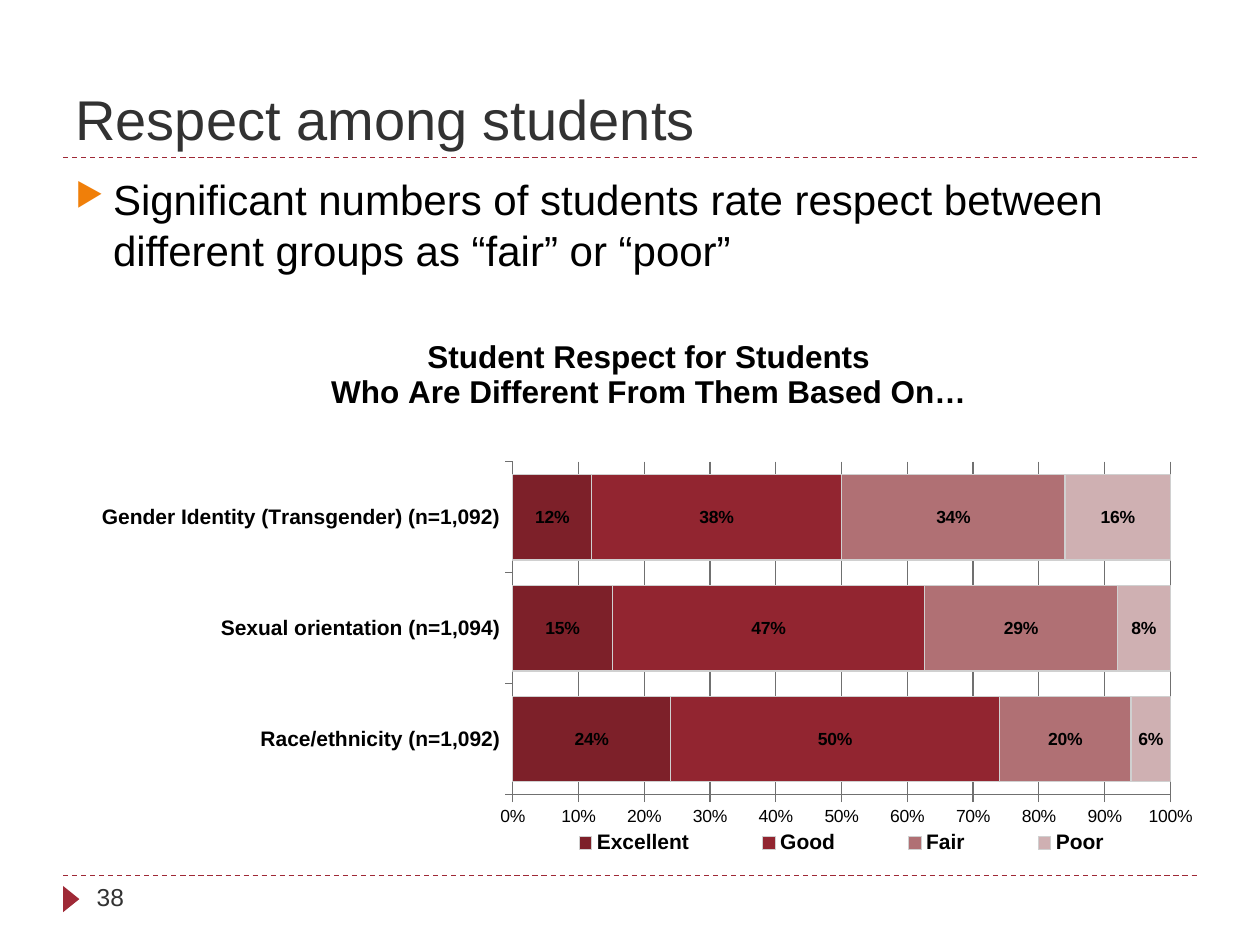
from lxml.etree import SubElement
from pptx import Presentation
from pptx.chart.data import CategoryChartData
from pptx.dml.color import RGBColor
from pptx.enum.chart import XL_CHART_TYPE as ChartType, XL_LABEL_POSITION as LabelPos
from pptx.enum.chart import XL_LEGEND_POSITION as LegendPos, XL_TICK_MARK as TickMark
from pptx.enum.dml import MSO_LINE as Dash
from pptx.enum.shapes import MSO_CONNECTOR as Connector, MSO_SHAPE as Shape
from pptx.enum.text import MSO_ANCHOR as Anchor
from pptx.oxml import parse_xml
from pptx.oxml.ns import nsdecls, qn
from pptx.util import Cm, Pt

RED, ORANGE, DARK, BLACK, GREY = "9F2936", "F07F09", "323232", "000000", "707070"
GROUPS = ["Race/ethnicity (n=1,092)", "Sexual orientation (n=1,094)",
          "Gender Identity (Transgender) (n=1,092)"]
RATINGS = [
    ("Excellent", "7D2029", (0.24, 0.15, 0.12)),
    ("Good", "922530", (0.5, 0.47, 0.38)),
    ("Fair", "B07074", (0.2, 0.29, 0.34)),
    ("Poor", "CFB0B2", (0.06, 0.08, 0.16)),
]


def color(hex_code):
    """Return the colour for a hex string."""
    return RGBColor.from_string(hex_code)


def style(font, size, hex_code=BLACK, bold=False):
    """Set typeface, size, colour and weight of a font."""
    font.name, font.size, font.bold = "Arial", Pt(size), bold
    font.color.rgb = color(hex_code)


def add_text(slide, box, text, size, hex_code, anchor=Anchor.TOP):
    """Add a wrapped one-paragraph text box and return its paragraph."""
    frame = slide.shapes.add_textbox(*map(Cm, box)).text_frame
    frame.word_wrap, frame.vertical_anchor = True, anchor
    paragraph = frame.paragraphs[0]
    paragraph.text = text
    style(paragraph.font, size, hex_code)
    return paragraph


def add_rule(slide, left, top, width):
    """Add a dashed horizontal rule."""
    rule = slide.shapes.add_connector(
        Connector.STRAIGHT, Cm(left), Cm(top), Cm(left + width), Cm(top))
    rule.line.color.rgb = color(RED)
    rule.line.width, rule.line.dash_style = Pt(0.75), Dash.DASH
    SubElement(rule._element.spPr, qn("a:effectLst"))


def add_heading(slide, left, top, width, height):
    """Add the title with the rule along its bottom edge."""
    add_rule(slide, left, top + height, width)
    add_text(slide, (left, top, width, height), "Respect among students",
             32, DARK, Anchor.BOTTOM)


def add_statement(slide, left, top, width, height):
    """Add the bulleted statement."""
    statement = add_text(
        slide, (left, top, width, height),
        "Significant numbers of students rate respect between "
        "different groups as “fair” or “poor”", 24, BLACK)
    statement.space_before = Pt(6)
    props = statement._p.get_or_add_pPr()
    props.set("marL", str(Cm(0.76)))
    props.set("indent", str(-Cm(0.76)))
    bullet_color = SubElement(props, qn("a:buClr"))
    SubElement(bullet_color, qn("a:srgbClr"), val=ORANGE)
    SubElement(props, qn("a:buSzPct"), val="76000")
    SubElement(props, qn("a:buChar"), char="▶")


def add_footer(slide, left, top, width):
    """Add the lower rule, the marker and the slide number."""
    add_rule(slide, left, top, width)
    marker = slide.shapes.add_shape(
        Shape.ISOSCELES_TRIANGLE, Cm(left - 0.1), Cm(top + 0.31), Cm(0.53), Cm(0.33))
    marker.rotation = 90
    marker.shadow.inherit = False
    marker.fill.solid()
    marker.fill.fore_color.rgb = color(RED)
    marker.line.fill.background()
    add_text(slide, (left + 0.43, top, 5.5, 1.02), "38", 14, DARK)


def set_layout(parent, index, x, y, w, h, inner=False):
    """Place a chart part by fractions of the chart area."""
    for old in parent.findall(qn("c:layout")):
        parent.remove(old)
    target = '<c:layoutTarget val="inner"/>' if inner else ""
    parent.insert(index, parse_xml(
        f'<c:layout {nsdecls("c")}><c:manualLayout>{target}'
        '<c:xMode val="edge"/><c:yMode val="edge"/>'
        f'<c:x val="{x}"/><c:y val="{y}"/><c:w val="{w}"/><c:h val="{h}"/>'
        '</c:manualLayout></c:layout>'))


def style_axes(chart):
    """Format both axes and the gridlines."""
    groups, shares = chart.category_axis, chart.value_axis
    style(groups.tick_labels.font, 12, bold=True)
    style(shares.tick_labels.font, 10)
    shares.tick_labels.number_format = "0%"
    shares.tick_labels.number_format_is_linked = False
    shares.maximum_scale, shares.major_unit = 1, 0.1
    shares.has_major_gridlines = True
    for axis in (groups, shares):
        axis.major_tick_mark = TickMark.OUTSIDE
    for part in (groups, shares, shares.major_gridlines):
        part.format.line.color.rgb = color(GREY)
        part.format.line.width = Pt(0.75)


def style_series(series, hex_code):
    """Format one rating's bars and value labels."""
    series.format.fill.solid()
    series.format.fill.fore_color.rgb = color(hex_code)
    series.format.line.color.rgb = color("D0D0D0")
    series.format.line.width = Pt(0.75)
    labels = series.data_labels
    labels.show_value = True
    labels.number_format, labels.number_format_is_linked = "0%", False
    labels.position = LabelPos.CENTER
    style(labels.font, 10, bold=True)


def add_respect_chart(slide, left, top, width, height):
    """Add the stacked chart of ratings by group."""
    data = CategoryChartData(number_format="0%")
    data.categories = GROUPS
    for rating, _, shares in RATINGS:
        data.add_series(rating, shares)
    chart = slide.shapes.add_chart(
        ChartType.BAR_STACKED_100, *map(Cm, (left, top, width, height)), data).chart
    style(chart.font, 10)

    chart.has_title = True
    heading = chart.chart_title.text_frame
    heading.text = "Student Respect for Students\nWho Are Different From Them Based On…"
    for paragraph in heading.paragraphs:
        style(paragraph.font, 18, bold=True)
    chart.chart_title.include_in_layout = False

    plot = chart.plots[0]
    plot.gap_width, plot.overlap, plot.vary_by_categories = 30, 100, False
    for series, (_, hex_code, _) in zip(plot.series, RATINGS):
        style_series(series, hex_code)
    style_axes(chart)

    chart.has_legend = True
    chart.legend.position = LegendPos.BOTTOM
    chart.legend.include_in_layout = False
    style(chart.legend.font, 12, bold=True)
    set_layout(chart._chartSpace.chart.plotArea, 0, 0.38, 0.26, 0.58, 0.59, inner=True)
    set_layout(chart.legend._element, 1, 0.38, 0.91, 0.58, 0.05)


def main():
    """Build and save the slide."""
    deck = Presentation()
    deck.slide_width, deck.slide_height = Cm(25.4), Cm(19.05)
    slide = deck.slides.add_slide(deck.slide_layouts[6])
    left, width = 1.27, 22.86
    add_heading(slide, left, 0.43, width, 2.75)
    add_statement(slide, left, 3.38, width, 13.72)
    add_footer(slide, left, 17.65, width)
    add_respect_chart(slide, 1.65, 6.35, width, 11.38)
    deck.save("out.pptx")


if __name__ == "__main__":
    main()
